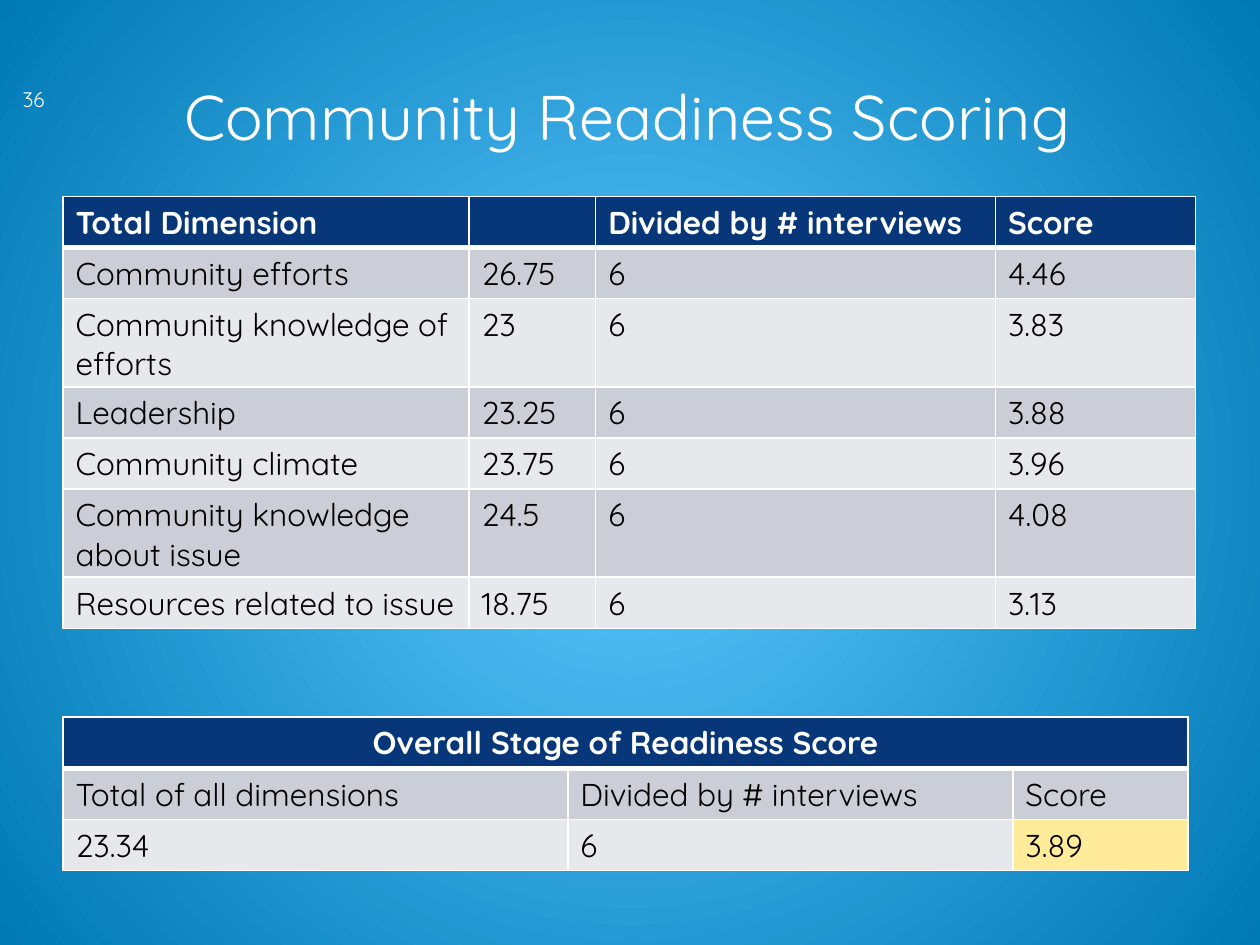
from pptx import Presentation
from pptx import util as u
from pptx.dml.color import RGBColor
from pptx.enum import text
from pptx.oxml import ns
from lxml import etree

COLORS = {
    "white": "FFFFFF", "black": "000000", "navy": "073779",
    "dark_band": "CCCED7", "light_band": "E7E8EC", "highlight": "FFEB99",
    "glow": "5DC9FF", "edge": "0079B5",
}


def write(frame, content, size=18, color="white", bold=False, align=text.PP_ALIGN.LEFT):
    paragraph = frame.paragraphs[0]
    paragraph.alignment = align
    if content:
        run = paragraph.add_run()
        run.text = content
        run.font.name = "Quicksand"
        run.font.size = u.Pt(size)
        run.font.bold = bold
        run.font.color.rgb = RGBColor.from_string(COLORS[color])


def add_border(cell, side, width):
    line = etree.SubElement(cell._tc.get_or_add_tcPr(), ns.qn(f"a:ln{side}"), w=str(u.Pt(width)))
    fill = etree.SubElement(line, ns.qn("a:solidFill"))
    etree.SubElement(fill, ns.qn("a:srgbClr"), val=COLORS["white"])


presentation = Presentation()
presentation.slide_width = u.Pt(720)
presentation.slide_height = u.Pt(540)
slide = presentation.slides.add_slide(presentation.slide_layouts[5])

background = slide.background.fill
background.gradient()
for stop, position, name in zip(background.gradient_stops, (0, 1), ("glow", "edge")):
    stop.position = position
    stop.color.rgb = RGBColor.from_string(COLORS[name])
gradient = slide.element.find(".//" + ns.qn("a:gradFill"))
gradient.remove(gradient.find(ns.qn("a:lin")))
circle = etree.SubElement(gradient, ns.qn("a:path"), path="circle")
etree.SubElement(circle, ns.qn("a:fillToRect"), l="50000", t="50000", r="50000", b="50000")

title = slide.shapes.title
title.left, title.top, title.width, title.height = [u.Pt(n) for n in (34.5, 40.3, 648, 51)]
title.text_frame.auto_size = text.MSO_AUTO_SIZE.SHAPE_TO_FIT_TEXT
write(title.text_frame, "Community Readiness Scoring", size=36, align=text.PP_ALIGN.CENTER)

dimension_rows = [
    ("Total Dimension", "", "Divided by # interviews", "Score"),
    ("Community efforts", "26.75", "6", "4.46"),
    ("Community knowledge of efforts", "23", "6", "3.83"),
    ("Leadership", "23.25", "6", "3.88"),
    ("Community climate", "23.75", "6", "3.96"),
    ("Community knowledge about issue", "24.5", "6", "4.08"),
    ("Resources related to issue", "18.75", "6", "3.13"),
]
overall_rows = [
    ("Overall Stage of Readiness Score", "", ""),
    ("Total of all dimensions", "Divided by # interviews", "Score"),
    ("23.34", "6", "3.89"),
]
tables = []
for rows, top, height, widths in (
    (dimension_rows, 112.2, 267.8, (232, 72.4, 228.5, 114.2)),
    (overall_rows, 409.8, 87.6, (288.5, 254.3, 100.2)),
):
    frame = slide.shapes.add_table(
        len(rows), len(widths), u.Pt(36), u.Pt(top), u.Pt(sum(widths)), u.Pt(height))
    table = frame.table
    tables.append(table)
    for column, width in zip(table.columns, widths):
        column.width = u.Pt(width)
    for row in table.rows:
        row.height = u.Pt(29.2)
    frame.height = u.Pt(height)
    for i, values in enumerate(rows):
        band = "navy" if i == 0 else "dark_band" if i % 2 else "light_band"
        for j, value in enumerate(values):
            cell = table.cell(i, j)
            write(cell.text_frame, value, color="black" if i else "white", bold=i == 0)
            for side in "LRTB":
                under_header = (i, side) in ((0, "B"), (1, "T"))
                add_border(cell, side, 3 if under_header else 1)
            cell.fill.solid()
            cell.fill.fore_color.rgb = RGBColor.from_string(COLORS[band])

overall = tables[1]
overall.cell(0, 0).merge(overall.cell(0, 2))
overall.cell(0, 0).text_frame.paragraphs[0].alignment = text.PP_ALIGN.CENTER
overall.cell(2, 2).fill.fore_color.rgb = RGBColor.from_string(COLORS["highlight"])

number = slide.shapes.add_textbox(u.Pt(5.8), u.Pt(47.5), u.Pt(109.4), u.Pt(18))
number.text_frame.word_wrap = True
number.text_frame.vertical_anchor = text.MSO_ANCHOR.MIDDLE
write(number.text_frame, "36", size=12)

presentation.save("out.pptx")
